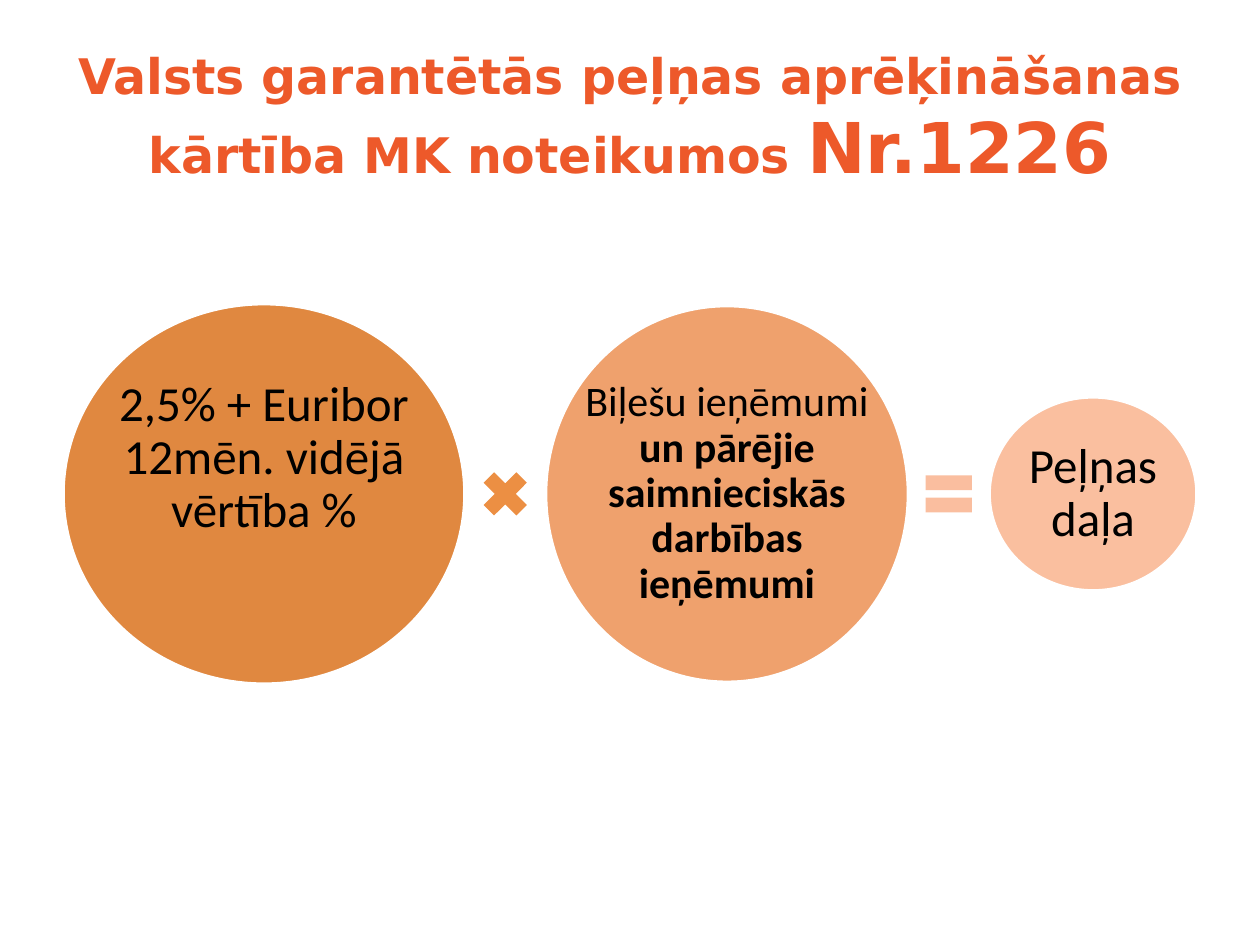
"""Build a slide showing the guaranteed profit formula as a row of circles and signs."""
from pptx import Presentation
from pptx.dml.color import RGBColor
from pptx.enum.shapes import MSO_SHAPE
from pptx.enum.text import MSO_ANCHOR, PP_ALIGN
from pptx.util import Inches, Pt

CIRCLE, TIMES, EQUALS = MSO_SHAPE.OVAL, MSO_SHAPE.MATH_MULTIPLY, MSO_SHAPE.MATH_EQUAL
MIDDLE, CENTER = MSO_ANCHOR.MIDDLE, PP_ALIGN.CENTER

THEME = {
    "title_font": "DejaVu Sans", "title_color": "ED592A", "title_size": 28, "number_size": 40,
    "body_font": "Calibri", "body_color": "000000", "body_size": 28, "dense_size": 24,
    "outline": "FFFFFF", "outline_width": 2,
    "rate": "E08840", "times": "EC8F43", "income": "EFA16D", "equals": "FABE9F", "profit": "FABF9F",
}

TITLE = [
    ("Valsts garantētās peļņas aprēķināšanas kārtība MK noteikumos ", True, THEME["title_size"]),
    ("Nr.1226", True, THEME["number_size"]),
]
BODY_SIZE, DENSE_SIZE = THEME["body_size"], THEME["dense_size"]
FORMULA = [
    {"kind": CIRCLE, "fill": "rate", "size": (3.19, 3.02), "bottom": 0.6,
     "text": [("2,5% + Euribor 12mēn. vidējā vērtība %", False, BODY_SIZE)]},
    {"kind": TIMES, "fill": "times", "size": (0.5, 0.5)},
    {"kind": CIRCLE, "fill": "income", "size": (2.88, 2.99), "side": 0.24,
     "text": [("Biļešu ieņēmumi ", False, DENSE_SIZE),
              ("un pārējie saimnieciskās darbības ieņēmumi", True, DENSE_SIZE)]},
    {"kind": EQUALS, "fill": "equals", "size": (0.5, 0.5)},
    {"kind": CIRCLE, "fill": "profit", "size": (1.65, 1.54),
     "text": [("Peļņas daļa", False, BODY_SIZE)]},
]
ROW_LEFT, ROW_MIDDLE, GAP, INSET = 0.5, 3.92, 0.07, 0.04


def color(name):
    return RGBColor.from_string(THEME[name])


def add_text(page, spans, area, style, inset=(0.1, 0.05, 0.1, 0.05), spacing=1.0):
    box = page.shapes.add_textbox(*map(Inches, area))
    frame = box.text_frame
    frame.word_wrap = True
    frame.vertical_anchor = MIDDLE
    (frame.margin_left, frame.margin_top,
     frame.margin_right, frame.margin_bottom) = map(Inches, inset)
    para = frame.paragraphs[0]
    para.alignment = CENTER
    para.line_spacing = spacing
    for text, bold, size in spans:
        span = para.add_run()
        span.text = text
        span.font.name = THEME[f"{style}_font"]
        span.font.color.rgb = color(f"{style}_color")
        span.font.size = Pt(size)
        span.font.bold = bold


def add_part(page, part, area):
    shape = page.shapes.add_shape(part["kind"], *map(Inches, area))
    shape.shadow.inherit = False
    shape.fill.solid()
    shape.fill.fore_color.rgb = color(part["fill"])
    if part["kind"] == CIRCLE:
        shape.line.color.rgb = color("outline")
        shape.line.width = Pt(THEME["outline_width"])
    else:
        shape.line.fill.background()
    if "text" in part:
        side = part.get("side", INSET)
        inset = (side, INSET, side, part.get("bottom", INSET))
        add_text(page, part["text"], area, "body", inset=inset, spacing=0.9)


def main():
    deck = Presentation()
    deck.slide_width, deck.slide_height = Inches(10), Inches(7.5)
    page = deck.slides.add_slide(deck.slide_layouts[6])
    add_text(page, TITLE, (0.5, 0.3, 9, 1.25), "title")
    left = ROW_LEFT
    for part in FORMULA:
        width, height = part["size"]
        add_part(page, part, (left, ROW_MIDDLE - height / 2, width, height))
        left += width + GAP
    deck.save("out.pptx")


if __name__ == "__main__":
    main()
